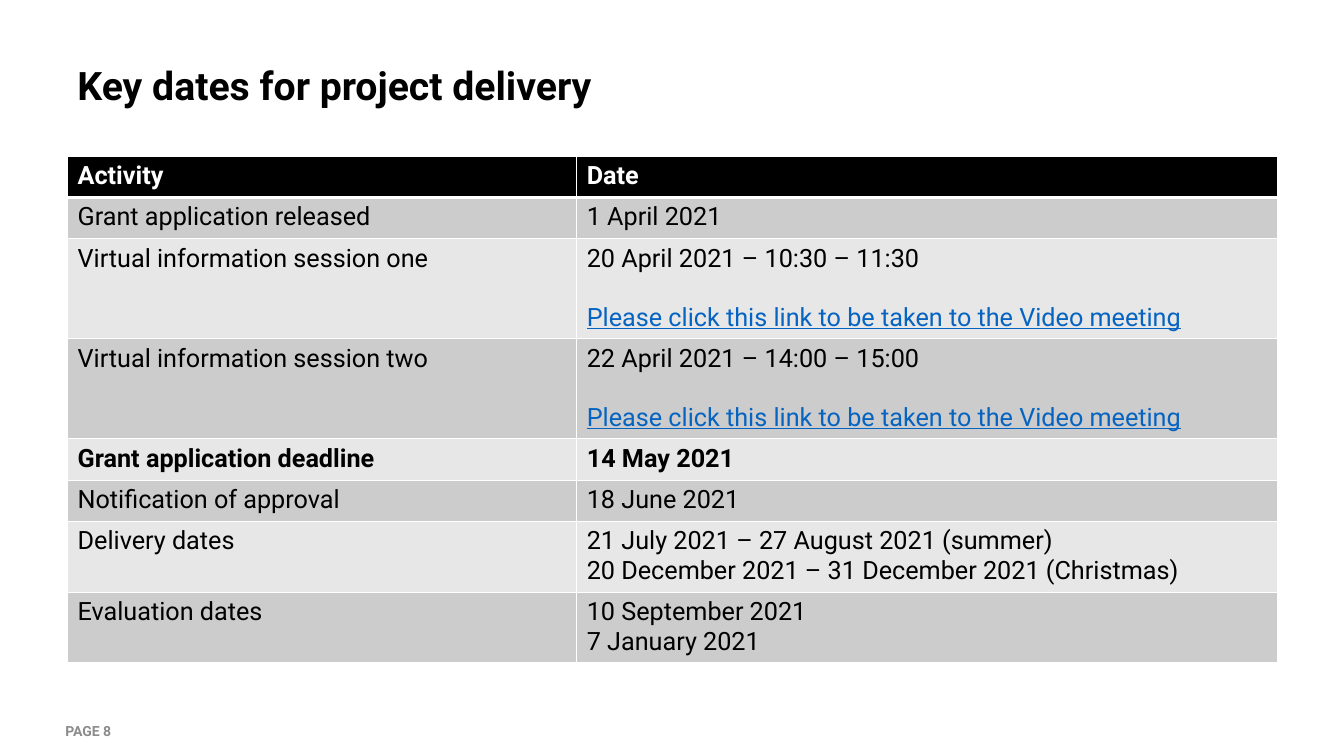
from dataclasses import dataclass

from lxml import etree
from pptx import Presentation
from pptx.dml.color import RGBColor
from pptx.enum.text import MSO_ANCHOR
from pptx.oxml.ns import qn
from pptx.slide import Slide
from pptx.table import _Cell
from pptx.text.text import _Paragraph
from pptx.util import Inches, Pt

MIDDLE = MSO_ANCHOR.MIDDLE
FONT = "Roboto"
BLACK, WHITE, GREY = "000000", "FFFFFF", "8C8C8C"
LINK_BLUE = "0563C1"
BAND_FILLS = ("E7E7E7", "CCCCCC")
COLUMN_WIDTHS = (5.05, 6.95)
ROW_HEIGHT, EXTRA_LINE = 0.41, 0.29
LINK_GAP = 21
LINK_TEXT = "Please click this link to be taken to the Video meeting"


@dataclass(frozen=True)
class KeyDate:
    activity: str
    dates: tuple[str, ...]
    has_link: bool = False
    bold: bool = False

    @property
    def height(self) -> float:
        extra_lines = len(self.dates) - 1 + 2 * self.has_link
        return ROW_HEIGHT + EXTRA_LINE * extra_lines


KEY_DATES = (
    KeyDate("Activity", ("Date",), bold=True),
    KeyDate("Grant application released", ("1 April 2021",)),
    KeyDate("Virtual information session one", ("20 April 2021 – 10:30 – 11:30",), has_link=True),
    KeyDate("Virtual information session two", ("22 April 2021 – 14:00 – 15:00",), has_link=True),
    KeyDate("Grant application deadline", ("14 May 2021",), bold=True),
    KeyDate("Notification of approval", ("18 June 2021",)),
    KeyDate("Delivery dates", (
        "21 July 2021 – 27 August 2021 (summer)",
        "20 December 2021 – 31 December 2021 (Christmas)",
    )),
    KeyDate("Evaluation dates", ("10 September 2021", "7 January 2021")),
)


def rgb(value: str) -> RGBColor:
    return RGBColor.from_string(value)


def add_run(paragraph: _Paragraph, text: str, size: float, color: str,
            bold: bool = False, underline: bool = False) -> None:
    run = paragraph.add_run()
    run.text = text
    run.font.name = FONT
    run.font.size = Pt(size)
    run.font.bold = bold
    run.font.underline = underline
    run.font.color.rgb = rgb(color)


def add_label(slide: Slide, text: str, left: float, top: float, width: float,
              height: float, size: float, color: str) -> None:
    label = slide.shapes.add_textbox(Inches(left), Inches(top), Inches(width), Inches(height))
    frame = label.text_frame
    frame.word_wrap = True
    frame.vertical_anchor = MIDDLE
    add_run(frame.paragraphs[0], text, size, color, bold=True)


def style_cell(cell: _Cell, fill: str, top: float, bottom: float) -> None:
    properties = cell._tc.get_or_add_tcPr()
    for side, width in (("L", 1), ("R", 1), ("T", top), ("B", bottom)):
        border = etree.SubElement(properties, qn(f"a:ln{side}"), w=str(Pt(width)))
        solid = etree.SubElement(border, qn("a:solidFill"))
        etree.SubElement(solid, qn("a:srgbClr"), val=WHITE)
    cell.fill.solid()
    cell.fill.fore_color.rgb = rgb(fill)


def write_lines(cell: _Cell, lines: tuple[str, ...], color: str, bold: bool) -> None:
    for index, line in enumerate(lines):
        frame = cell.text_frame
        paragraph = frame.add_paragraph() if index else frame.paragraphs[0]
        add_run(paragraph, line, 18, color, bold)


def add_dates_table(slide: Slide) -> None:
    total_height = sum(key_date.height for key_date in KEY_DATES)
    table = slide.shapes.add_table(
        len(KEY_DATES), len(COLUMN_WIDTHS), Inches(0.67), Inches(1.55),
        Inches(sum(COLUMN_WIDTHS)), Inches(total_height)).table
    for column, width in zip(table.columns, COLUMN_WIDTHS):
        column.width = Inches(width)
    for index, key_date in enumerate(KEY_DATES):
        table.rows[index].height = Inches(key_date.height)
        is_header = index == 0
        fill = BLACK if is_header else BAND_FILLS[index % 2]
        color = WHITE if is_header else BLACK
        for column, lines in enumerate(((key_date.activity,), key_date.dates)):
            cell = table.cell(index, column)
            style_cell(cell, fill, 3 if index == 1 else 1, 3 if is_header else 1)
            write_lines(cell, lines, color, key_date.bold)
        if key_date.has_link:
            meeting = table.cell(index, 1).text_frame.add_paragraph()
            meeting.space_before = Pt(LINK_GAP)
            add_run(meeting, LINK_TEXT, 18, LINK_BLUE, underline=True)


def main() -> None:
    presentation = Presentation()
    presentation.slide_width = Inches(13.33)
    presentation.slide_height = Inches(7.5)
    slide = presentation.slides.add_slide(presentation.slide_layouts[6])
    add_label(slide, "Key dates for project delivery", 0.67, 0.3, 12, 1.09, 28, BLACK)
    add_dates_table(slide)
    add_label(slide, "PAGE 8", 0.55, 7.05, 3.11, 0.4, 10, GREY)
    presentation.save("out.pptx")


if __name__ == "__main__":
    main()
